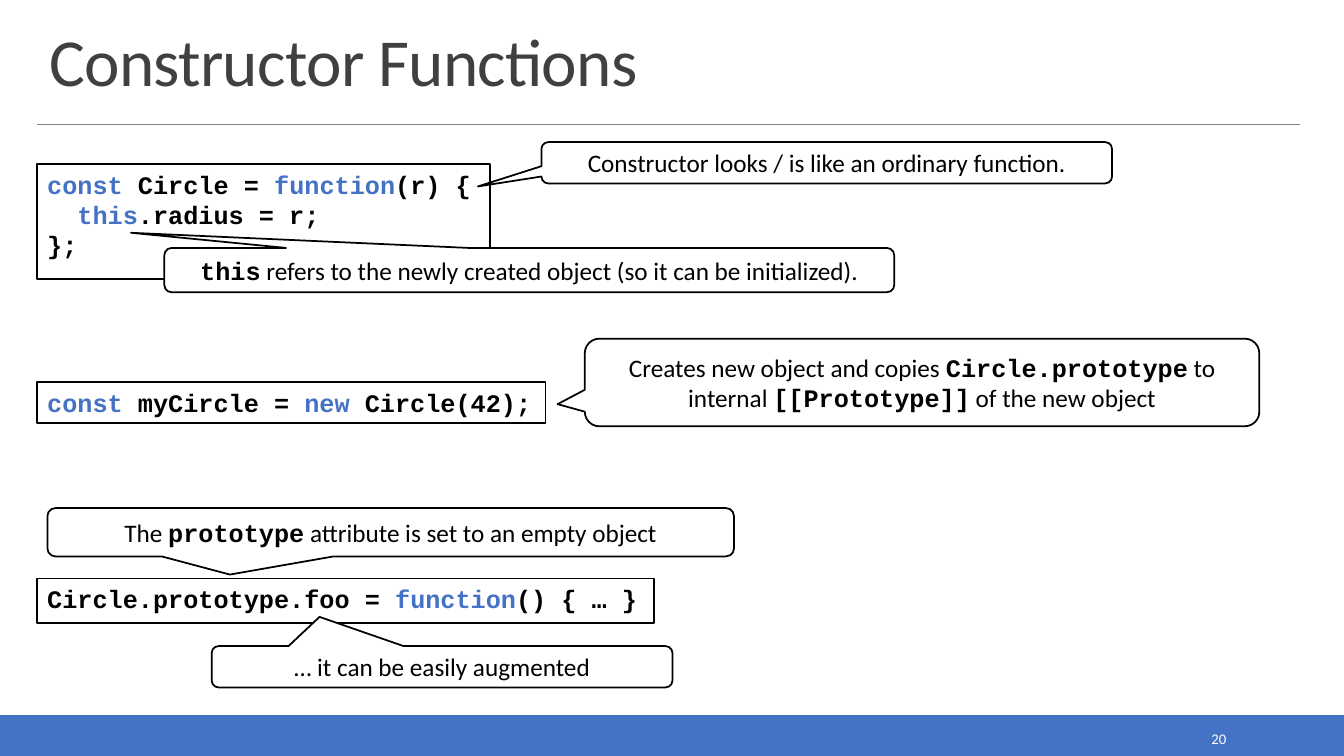
from lxml.etree import SubElement
from pptx import Presentation
from pptx.dml.color import RGBColor
from pptx.enum.shapes import MSO_CONNECTOR, MSO_SHAPE
from pptx.enum.text import MSO_ANCHOR, PP_ALIGN
from pptx.oxml.ns import qn
from pptx.util import Inches, Pt

BLUE, BLACK, WHITE, GRAY, DARK = "4472C4", "000000", "FFFFFF", "808080", "404040"

# Run styles: font, bold, colour
PLAIN = ("Calibri", False, BLACK)
CODE = ("Courier New", True, BLACK)
KEYWORD = ("Courier New", True, BLUE)

TITLE = "Constructor Functions"
SLIDE_NUMBER = "20"

# Box (left, top, width, height), then lines of runs
CODE_BOXES = [
    ((0.37, 1.63, 4.49, 1.14), [
        [("const", KEYWORD), (" Circle = ", CODE), ("function", KEYWORD), ("(r) {", CODE)],
        [("  ", CODE), ("this", KEYWORD), (".radius = r;", CODE)],
        [("};", CODE)],
    ]),
    ((0.37, 3.79, 5.04, 0.41), [
        [("const ", KEYWORD), ("myCircle = ", CODE), ("new", KEYWORD), (" Circle(42);", CODE)],
    ]),
    ((0.37, 5.74, 6.12, 0.44), [
        [("Circle.prototype.foo = ", CODE), ("function", KEYWORD), ("() { … }", CODE)],
    ]),
]

# Box, tip of the pointer (x, y), then runs
CALLOUTS = [
    ((5.8, 3.36, 6.69, 0.87), (5.53, 4.01), [
        ("Creates new object and copies ", PLAIN), ("Circle.prototype", CODE),
        (" to internal ", PLAIN), ("[[Prototype]]", CODE), (" of the new object", PLAIN)]),
    ((5.37, 1.41, 5.66, 0.41), (4.74, 1.85), [
        ("Constructor looks / is like an ordinary function.", PLAIN)]),
    ((1.63, 2.46, 7.24, 0.44), (1.3, 2.31), [
        ("this", CODE),
        (" refers to the newly created object (so it can be initialized).", PLAIN)]),
    ((0.47, 5.04, 6.81, 0.48), (2.28, 5.7), [
        ("The ", PLAIN), ("prototype", CODE),
        (" attribute is set to an empty object", PLAIN)]),
    ((2.1, 6.41, 4.57, 0.41), (3.17, 6.12), [
        ("… it can be easily augmented", PLAIN)]),
]


def color(hex_value):
    return RGBColor.from_string(hex_value)


def add_box(slide, kind, box, fill=None, line=BLACK):
    shape = slide.shapes.add_shape(kind, *map(Inches, box))
    shape.shadow.inherit = False
    if fill:
        shape.fill.solid()
        shape.fill.fore_color.rgb = color(fill)
    else:
        shape.fill.background()
    shape.line.color.rgb = color(line)
    shape.line.width = Pt(1.25)
    return shape


def write_lines(shape, lines, anchor, alignment):
    frame = shape.text_frame
    frame.word_wrap = True
    frame.vertical_anchor = anchor
    for index, runs in enumerate(lines):
        paragraph = frame.add_paragraph() if index else frame.paragraphs[0]
        paragraph.alignment = alignment
        paragraph.font.size = Pt(18)
        for text, (font_name, bold, font_color) in runs:
            run = paragraph.add_run()
            run.text = text
            run.font.name = font_name
            run.font.bold = bold
            run.font.color.rgb = color(font_color)


def add_callout(slide, box, tip, runs):
    left, top, width, height = box
    shape = add_box(slide, MSO_SHAPE.ROUNDED_RECTANGULAR_CALLOUT, box, WHITE)
    # The pointer is measured from the centre, as a share of the box size
    shape.adjustments[0] = (tip[0] - left) / width - 0.5
    shape.adjustments[1] = (tip[1] - top) / height - 0.5
    write_lines(shape, [runs], MSO_ANCHOR.MIDDLE, PP_ALIGN.CENTER)


def add_label(slide, box, text, size, font_color, anchor):
    frame = slide.shapes.add_textbox(*map(Inches, box)).text_frame
    frame.word_wrap = True
    frame.vertical_anchor = anchor
    paragraph = frame.paragraphs[0]
    paragraph.add_run().text = text
    paragraph.font.name = "Calibri"
    paragraph.font.size = Pt(size)
    paragraph.font.color.rgb = color(font_color)
    return paragraph


def main():
    presentation = Presentation()
    presentation.slide_width = Inches(13.33)
    presentation.slide_height = Inches(7.5)
    slide = presentation.slides.add_slide(presentation.slide_layouts[6])

    add_box(slide, MSO_SHAPE.RECTANGLE, (0, 7.1, 13.33, 0.4), BLUE, BLUE)
    rule = slide.shapes.add_connector(
        MSO_CONNECTOR.STRAIGHT, Inches(0.37), Inches(1.23), Inches(12.89), Inches(1.23))
    rule.line.color.rgb = color(GRAY)
    rule.line.width = Pt(0.5)
    SubElement(rule.element.spPr, qn("a:effectLst"))

    title = add_label(slide, (0.39, 0.2, 12.52, 0.84), TITLE, 48, DARK, MSO_ANCHOR.BOTTOM)
    title.line_spacing = 0.85
    title.runs[0].font._element.set("spc", "-50")
    number = add_label(slide, (10.83, 7.19, 1.43, 0.28), SLIDE_NUMBER, 10.5, WHITE,
                       MSO_ANCHOR.MIDDLE)
    number.alignment = PP_ALIGN.RIGHT

    for box, lines in CODE_BOXES:
        shape = add_box(slide, MSO_SHAPE.RECTANGLE, box)
        write_lines(shape, lines, MSO_ANCHOR.TOP, PP_ALIGN.LEFT)
    for box, tip, runs in CALLOUTS:
        add_callout(slide, box, tip, runs)

    presentation.save("out.pptx")


if __name__ == "__main__":
    main()
